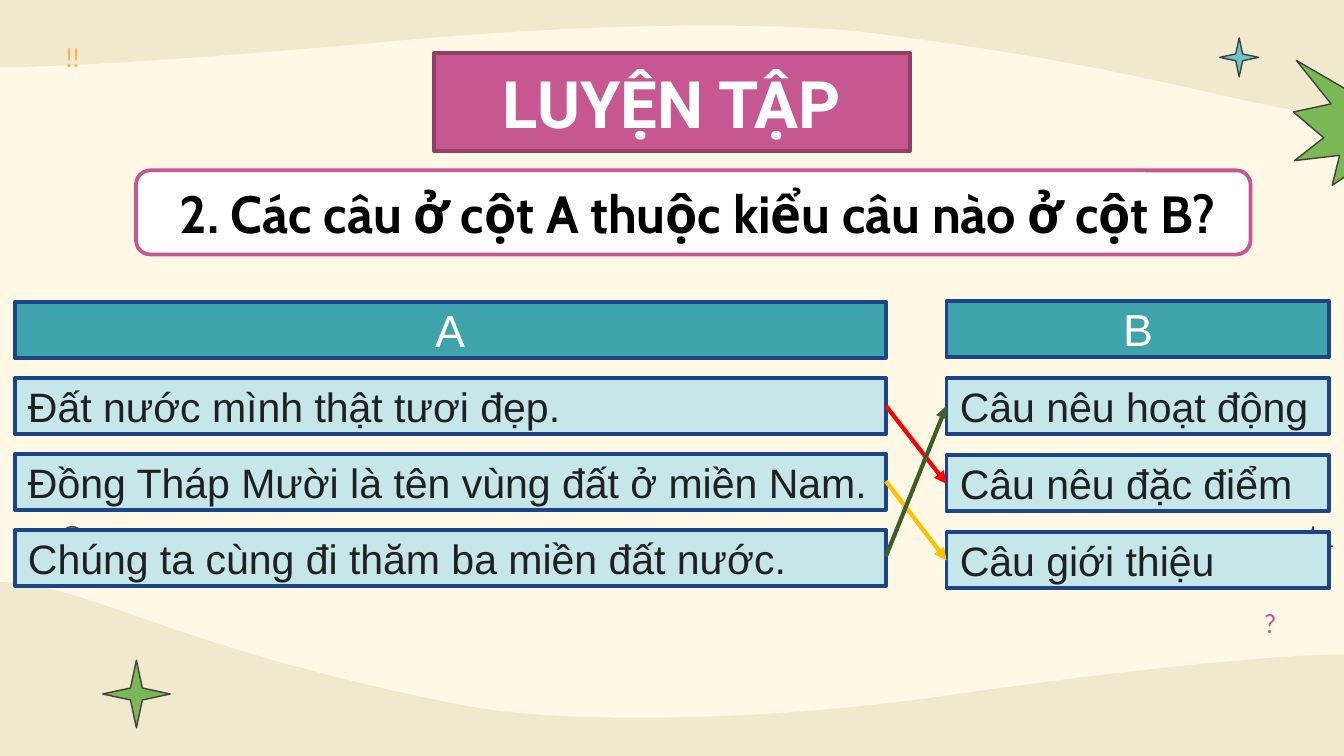
from lxml import etree
from pptx import Presentation
from pptx.dml.color import RGBColor
from pptx.enum.shapes import MSO_CONNECTOR as CONN, MSO_SHAPE as SHAPE
from pptx.enum.text import MSO_ANCHOR as ANCHOR, PP_ALIGN as ALIGN
from pptx.oxml.ns import qn
from pptx.util import Pt

CREAM = RGBColor(0xFE, 0xF8, 0xE4)
SAND = RGBColor(0xF1, 0xE9, 0xCE)
PINK = RGBColor(0xC7, 0x57, 0x90)
PLUM = RGBColor(0x91, 0x3F, 0x69)
GREEN = RGBColor(0x7A, 0xB8, 0x55)
AQUA = RGBColor(0x6D, 0xC3, 0xCA)
ORANGE = RGBColor(0xFA, 0xB7, 0x4D)
TEAL = RGBColor(0x3E, 0xA3, 0xAB)
PALE = RGBColor(0xC5, 0xE7, 0xEA)
NAVY = RGBColor(0x1C, 0x45, 0x87)
GREY = RGBColor(0x3F, 0x3F, 0x3F)
INK = RGBColor(0x20, 0x20, 0x20)
WHITE = RGBColor(0xFF, 0xFF, 0xFF)
BLACK = RGBColor(0, 0, 0)
RED = RGBColor(0xFF, 0, 0)
YELLOW = RGBColor(0xFF, 0xC0, 0)
FOREST = RGBColor(0x3C, 0x5F, 0x28)


def paint(sp, fill, line, width):
    sp.fill.solid()
    sp.fill.fore_color.rgb = fill
    sp.line.color.rgb = line
    sp.line.width = Pt(width)
    sp.shadow.inherit = False


def write(sp, text, color, align, anchor, **font):
    tf = sp.text_frame
    tf.word_wrap = True
    tf.vertical_anchor = anchor
    tf.margin_left = tf.margin_right = Pt(7.2)
    p = tf.paragraphs[0]
    p.alignment = align
    r = p.add_run()
    r.text = text
    r.font.color.rgb = color
    for name, value in font.items():
        setattr(r.font, name, value)


prs = Presentation()
prs.slide_width, prs.slide_height = Pt(720), Pt(405)
s = prs.slides.add_slide(prs.slide_layouts[5])
s.background.fill.solid()
s.background.fill.fore_color.rgb = CREAM

# Waves: three corners, then Bezier segments of three points each
waves = [
    [(720, 406), (0, 406), (0, 311.8),
     (45.4, 311.8), (91.4, 347), (245.5, 377.3),
     (269.3, 382.3), (303.1, 384.5), (342.7, 384.5),
     (391.7, 384.5), (448.6, 380.9), (504.7, 373),
     (614.9, 357.1), (688.3, 350.6), (720, 350.6)],
    [(720, 0), (0, 0), (0, 36),
     (31.7, 36), (105.1, 31.7), (215.3, 21.6),
     (271.4, 16.6), (328.3, 13.7), (377.3, 13.7),
     (416.9, 13.7), (450.7, 15.1), (474.5, 18.7),
     (628.6, 38.2), (674.6, 61.2), (720, 61.2)],
]
for wave in waves:
    points = [(Pt(x), Pt(y)) for x, y in wave]
    fb = s.shapes.build_freeform(*points[0])
    fb.add_line_segments(points[1:], close=True)
    sp = fb.convert_to_shape()
    paint(sp, SAND, SAND, 0)
    sp.line.fill.background()
    lines = list(sp._element.iter(qn("a:lnTo")))
    for i in range(2, 14, 3):
        curve = etree.Element(qn("a:cubicBezTo"))
        lines[i].addprevious(curve)
        for line in lines[i:i + 3]:
            curve.append(line[0])
            line.getparent().remove(line)

# Small ornaments
ornaments = [
    (SHAPE.STAR_4_POINT, 692.9, 282.2, 20.9, PINK),
    (SHAPE.EXPLOSION1, 692.9, 22.4, 94.3, GREEN),
    (SHAPE.STAR_4_POINT, 653.4, 20.3, 20.9, AQUA),
    (SHAPE.OVAL, 32.6, 282.2, 12.2, AQUA),
    (SHAPE.STAR_4_POINT, 55, 353.7, 36.2, GREEN),
]
for kind, x, y, size, color in ornaments:
    sp = s.shapes.add_shape(kind, Pt(x), Pt(y), Pt(size), Pt(size))
    paint(sp, color, GREY, 0.75)
    if kind == SHAPE.STAR_4_POINT:
        sp.adjustments[0] = 0.125

for text, x, y, w, h, color in [("?", 657.4, 321.8, 46.1, 73.4, PINK),
                                ("!!", 21.6, 18.7, 34.6, 56.2, ORANGE)]:
    sp = s.shapes.add_textbox(Pt(x), Pt(y), Pt(w), Pt(h))
    write(sp, text, color, ALIGN.CENTER, ANCHOR.TOP, name="Lato", size=Pt(14))

# Title, raised above the background
title = s.shapes.title
s.shapes._spTree.append(title._element)
title_box = {"left": 232.6, "top": 28.2, "width": 254.9, "height": 52.9}
for name, value in title_box.items():
    setattr(title, name, Pt(value))
title.fill.solid()
title.fill.fore_color.rgb = PINK
title.line.color.rgb = PLUM
title.line.width = Pt(2)
write(title, "LUYỆN TẬP", WHITE, ALIGN.CENTER, ANCHOR.TOP,
      name="Roboto", size=Pt(35), bold=True)
title.text_frame.margin_top = Pt(5.4)

# Question
sp = s.shapes.add_shape(SHAPE.ROUNDED_RECTANGLE,
                        Pt(72.9), Pt(91.3), Pt(597), Pt(45))
paint(sp, WHITE, PINK, 2)
write(sp, "2. Các câu ở cột A thuộc kiểu câu nào ở cột B? ", BLACK,
      ALIGN.CENTER, ANCHOR.TOP, name="Cabin", size=Pt(28), bold=True)
sp.text_frame.margin_left = Pt(18)

# Columns A and B: a header, then evenly spaced rows
ROW_H = 30
ROW_TOP = 202.5
columns = [
    (7.9, 466.7, 161.8, 40.7, "A",
     ["Đất nước mình thật tươi đẹp.",
      "Đồng Tháp Mười là tên vùng đất ở miền Nam.",
      "Chúng ta cùng đi thăm ba miền đất nước."]),
    (507.1, 205.1, 161.2, 41.3, "B",
     ["Câu nêu hoạt động", "Câu nêu đặc điểm", "Câu giới thiệu"]),
]
for x, w, head_top, pitch, head, rows in columns:
    sp = s.shapes.add_shape(SHAPE.RECTANGLE, Pt(x), Pt(head_top), Pt(w), Pt(ROW_H))
    paint(sp, TEAL, NAVY, 2)
    write(sp, head, WHITE, ALIGN.CENTER, ANCHOR.MIDDLE, name="Arial", size=Pt(24))
    for i, text in enumerate(rows):
        sp = s.shapes.add_shape(SHAPE.RECTANGLE, Pt(x), Pt(ROW_TOP + i * pitch),
                                Pt(w), Pt(ROW_H))
        paint(sp, PALE, NAVY, 2)
        write(sp, text, INK, ALIGN.JUSTIFY, ANCHOR.MIDDLE, name="Arial", size=Pt(22))

# Answer arrows from column A to column B
for y1, y2, color in [(217.4, 259.2, RED), (257.8, 300.2, YELLOW),
                      (298.1, 217.4, FOREST)]:
    cx = s.shapes.add_connector(CONN.STRAIGHT, Pt(474.6), Pt(y1), Pt(507.1), Pt(y2))
    cx.line.color.rgb = color
    cx.line.width = Pt(2.25)
    etree.SubElement(cx.line._get_or_add_ln(), qn("a:tailEnd"), type="triangle")
    etree.SubElement(cx._element.spPr, qn("a:effectLst"))

prs.save("out.pptx")
